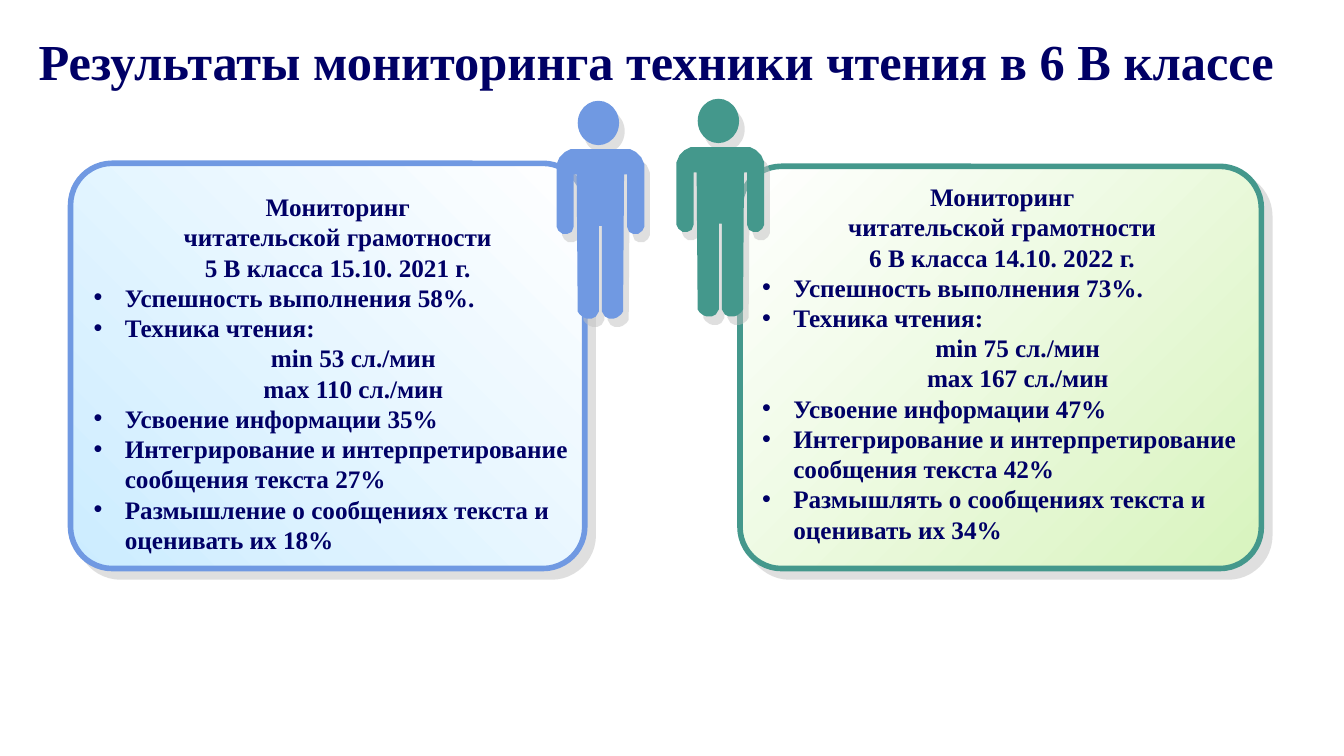
from lxml import etree
from pptx import Presentation
from pptx import util as u
from pptx.dml.color import RGBColor
from pptx.enum import shapes, text
from pptx.oxml.ns import qn

NAVY = RGBColor(0x00, 0x00, 0x66)
BLUE = RGBColor(0x70, 0x99, 0xE2)
TEAL = RGBColor(0x44, 0x98, 0x8C)
SKY = RGBColor(0xCC, 0xEC, 0xFF)
LIME = RGBColor(0xD8, 0xF4, 0xBE)
WHITE = RGBColor(0xFF, 0xFF, 0xFF)
SHADE = RGBColor(0xC0, 0xC0, 0xC0)

CELL = u.Inches(0.1)
HUNDREDTH = u.Inches(0.01)
INDENT = u.Inches(0.31)
FONT = {"name": "Times New Roman", "bold": True}
HEADING, BULLET, READING = "heading", "bullet", "reading"
KINDS = [HEADING] * 3 + [BULLET] * 2 + [READING] * 2 + [BULLET] * 3

HALF_BODY = [(14, 0), (8, 3), (3, 8), (0, 15), (0, 77), (2, 81), (6, 84),
             (11, 84), (15, 82), (17, 77), (17, 25), (20, 25), (21, 161),
             (23, 164), (27, 167), (30, 168), (35, 168), (39, 166),
             (42, 161), (42, 76)]
BODY_WIDTH = 87

PANELS = [
    {
        "box": (7, 16.2, 51, 40.2),
        "text_box": (1.3, 2.3, 50.4, 40.4),
        "person_at": (48.2, -6.2),
        "accent": BLUE,
        "gradient": (SKY, WHITE),
        "angle": 45,
        "lines": [
            "Мониторинг",
            "читательской грамотности",
            "5 В класса 15.10. 2021 г.",
            "Успешность выполнения 58%.",
            "Техника чтения:",
            "min 53 сл./мин",
            "max 110 сл./мин",
            "Усвоение информации 35%",
            "Интегрирование и интерпретирование сообщения текста 27%",
            "Размышление о сообщениях текста и оценивать их 18%",
        ],
    },
    {
        "box": (73.4, 16.5, 51.7, 39.9),
        "text_box": (1.2, 1, 49.6, 43.4),
        "person_at": (-6.3, -6.7),
        "accent": TEAL,
        "gradient": (WHITE, LIME),
        "angle": 315,
        "lines": [
            "Мониторинг",
            "читательской грамотности",
            "6 В класса 14.10. 2022 г.",
            "Успешность выполнения 73%.",
            "Техника чтения:",
            "min 75 сл./мин",
            "max 167 сл./мин",
            "Усвоение информации 47%",
            "Интегрирование и интерпретирование сообщения текста 42%",
            "Размышлять о сообщениях текста и оценивать их 34%",
        ],
    },
]


def cells(*counts):
    return [round(count * CELL) for count in counts]


def cast_shadow(figure, distance, angle):
    figure.shadow.inherit = False
    effects = figure._element.spPr.find(qn("a:effectLst"))
    shadow = etree.SubElement(effects, qn("a:outerShdw"), {
        "dist": str(u.Pt(distance)), "dir": str(angle * 60000),
        "algn": "ctr", "rotWithShape": "0"})
    tint = etree.SubElement(shadow, qn("a:srgbClr"), val=str(SHADE))
    etree.SubElement(tint, qn("a:alpha"), val="50000")


def write(paragraph, wording, size):
    run = paragraph.add_run()
    run.text = wording
    for name, value in {**FONT, "size": u.Pt(size)}.items():
        setattr(run.font, name, value)
    run.font.color.rgb = NAVY


def add_title(slide, box, wording):
    frame = slide.shapes.add_textbox(*cells(*box)).text_frame
    frame.word_wrap = True
    title = frame.paragraphs[0]
    title.alignment = text.PP_ALIGN.CENTER
    write(title, wording, 36)


def add_card(slide, box, accent, gradient, angle):
    card = slide.shapes.add_shape(
        shapes.MSO_SHAPE.ROUNDED_RECTANGLE, *cells(*box))
    card.adjustments[0] = 0.103
    card.fill.gradient()
    card.fill.gradient_angle = angle
    for stop, colour in zip(card.fill.gradient_stops, gradient):
        stop.color.rgb = colour
    card.line.color.rgb = accent
    card.line.width = u.Pt(4)
    cast_shadow(card, 8.5, 45)


def add_person(slide, left, top, accent):
    person = slide.shapes.add_group_shape().shapes
    head = person.add_shape(
        shapes.MSO_SHAPE.OVAL, *cells(left + 2.1, top, 4.1, 4.4))
    mirrored = [(BODY_WIDTH - x, y) for x, y in reversed(HALF_BODY)]
    outline = person.build_freeform(*HALF_BODY[0], scale=HUNDREDTH)
    outline.add_line_segments(HALF_BODY[1:] + mirrored, close=True)
    body = outline.convert_to_shape(*cells(left, top + 4.8))
    for part in (head, body):
        part.fill.solid()
        part.fill.fore_color.rgb = accent
        part.line.fill.background()
        cast_shadow(part, 7.2, 56)


def add_findings(slide, box, lines):
    frame = slide.shapes.add_textbox(*cells(*box)).text_frame
    frame.word_wrap = True
    for number, (kind, wording) in enumerate(zip(KINDS, lines)):
        finding = frame.add_paragraph() if number else frame.paragraphs[0]
        layout = finding._p.get_or_add_pPr()
        if kind != HEADING:
            layout.set("marL", str(INDENT))
        if kind == BULLET:
            layout.set("indent", str(-INDENT))
            etree.SubElement(layout, qn("a:buFont"), typeface="Arial")
            etree.SubElement(layout, qn("a:buChar"), char="•")
        else:
            finding.alignment = text.PP_ALIGN.CENTER
        write(finding, wording, 18)


def add_panel(slide, box, text_box, person_at, accent, gradient, angle, lines):
    left, top = box[:2]
    add_card(slide, box, accent, gradient, angle)
    add_person(slide, left + person_at[0], top + person_at[1], accent)
    add_findings(
        slide, (left + text_box[0], top + text_box[1], *text_box[2:]), lines)


def main():
    deck = Presentation()
    deck.slide_width, deck.slide_height = u.Inches(13.33), u.Inches(7.5)
    slide = deck.slides.add_slide(deck.slide_layouts[6])
    add_title(slide, (0.9, 2.5, 128.4, 7.1),
              "Результаты мониторинга техники чтения в 6 В классе")
    for panel in PANELS:
        add_panel(slide, **panel)
    deck.save("out.pptx")


if __name__ == "__main__":
    main()
